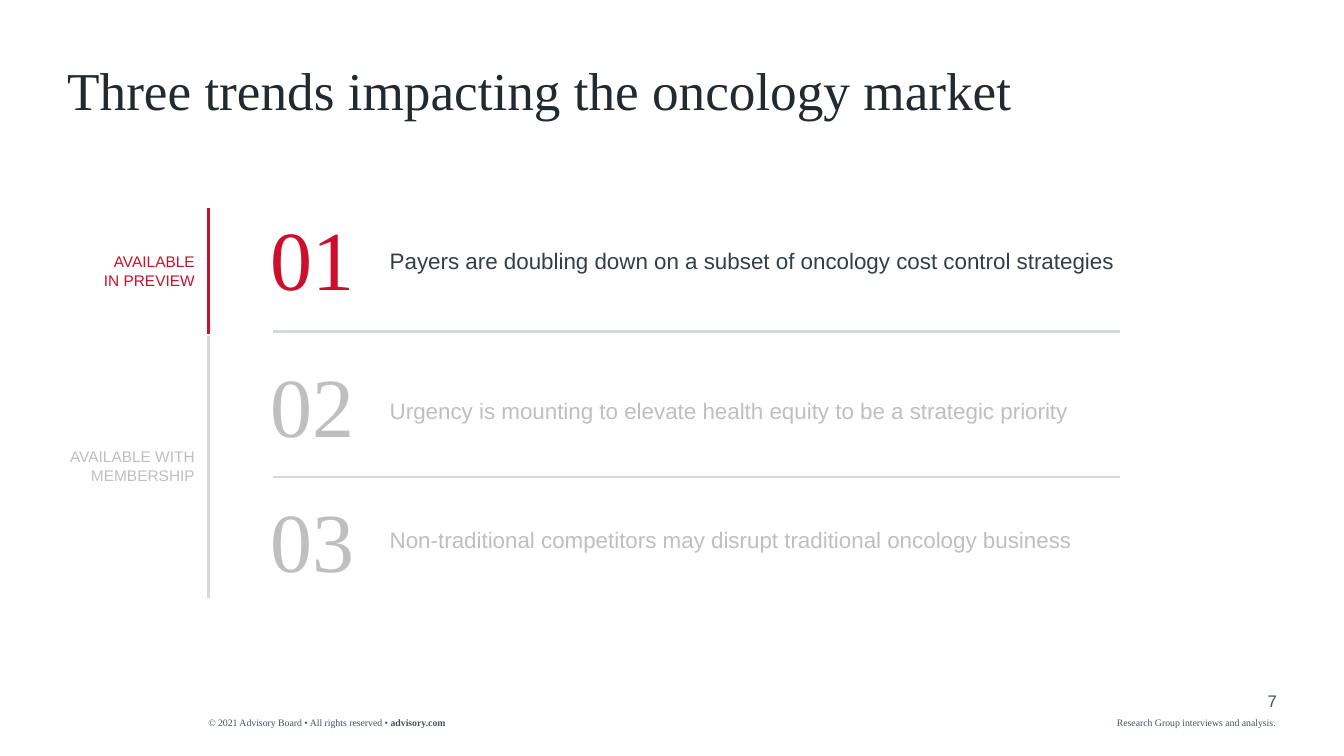
"""Build the slide on three trends impacting the oncology market."""
import pptx
import pptx.dml.color
import pptx.enum.shapes
import pptx.enum.text
import pptx.oxml
import pptx.oxml.ns
import pptx.util

WIDTH, HEIGHT = pptx.util.Inches(13.33), pptx.util.Inches(7.5)
COLUMNS = ROWS = 20
SERIF, SANS = "Times New Roman", "Arial"
COLORS = {
    "title": "222A30",
    "body": "323E48",
    "footer": "445460",
    "accent": "CE0E2D",
    "muted": "BFBFBF",
    "rule": "D6D9DA",
}
RULE_X = 3.1
LABEL_RIGHT = 2.9
TRENDS = [
    ("01", 5.47, 6.53, "accent", "body",
     "Payers are doubling down on a subset of oncology cost control strategies"),
    ("02", 9.36, 10.51, "muted", "muted",
     "Urgency is mounting to elevate health equity to be a strategic priority"),
    ("03", 12.93, 13.92, "muted", "muted",
     "Non-traditional competitors may disrupt traditional oncology business"),
]
DIVIDERS = [8.77, 12.61]
SECTIONS = [
    ("AVAILABLE IN PREVIEW", 1.41, 6.67, "accent", "accent", 5.49, 8.83),
    ("AVAILABLE WITH MEMBERSHIP", 1.91, 11.84, "muted", "rule", 8.88, 15.81),
]


def col(n):
    """Return the horizontal length of n grid columns."""
    return round(n * WIDTH / COLUMNS)


def row(n):
    """Return the vertical length of n grid rows."""
    return round(n * HEIGHT / ROWS)


def rgb(name):
    """Return the named colour."""
    return pptx.dml.color.RGBColor.from_string(COLORS[name])


def add_text(s, text, x, y, w, h, size, font=SANS, color="body",
             right=False, wrap=True, spacing=None, bold_tail=""):
    """Add a text box without insets, with an optional bold ending."""
    tf = s.shapes.add_textbox(col(x), row(y), col(w), row(h)).text_frame
    tf.margin_left = tf.margin_right = tf.margin_top = tf.margin_bottom = 0
    tf.word_wrap = wrap
    p = tf.paragraphs[0]
    align = pptx.enum.text.PP_ALIGN
    p.alignment = align.RIGHT if right else align.LEFT
    if spacing:
        p.line_spacing = spacing
    for part, bold in ((text, False), (bold_tail, True)):
        if part:
            r = p.add_run()
            r.text = part
            r.font.name, r.font.size = font, pptx.util.Pt(size)
            r.font.bold = bold
            r.font.color.rgb = rgb(color)


def add_rule(s, x1, y1, x2, y2, color, weight):
    """Add a straight line between two grid points."""
    line = s.shapes.add_connector(
        pptx.enum.shapes.MSO_CONNECTOR.STRAIGHT,
        col(x1), row(y1), col(x2), row(y2))
    line.line.color.rgb = rgb(color)
    line.line.width = pptx.util.Pt(weight)
    line._element.spPr.append(pptx.oxml.parse_xml(
        f"<a:effectLst {pptx.oxml.ns.nsdecls('a')}/>"))


def add_trend(s, number, number_y, text_y, number_color, text_color, text):
    """Add a large number and its trend statement."""
    add_text(s, text, 5.8, text_y, 11.8, 0.72, 16, color=text_color)
    add_text(s, number, 3.88, number_y, 1.4, 2.69, 60, SERIF,
             number_color, right=True)


def add_section(s, label, width, y, label_color, rule_color, top, bottom):
    """Add a side label and the vertical rule of its section."""
    add_rule(s, RULE_X, top, RULE_X, bottom, rule_color, 2.25)
    add_text(s, label, LABEL_RIGHT - width, y, width, 0.99, 11,
             color=label_color, right=True)


def add_footer(s):
    """Add the copyright line, the source line and the page number."""
    add_text(s, "© 2021 Advisory Board • All rights reserved • ",
             RULE_X, 18.96, 4.89, 0.32, 7, SERIF, "footer",
             bold_tail="advisory.com")
    add_text(s, "Research Group interviews and analysis.",
             16.62, 18.96, 2.38, 0.32, 7, SERIF, "footer", wrap=False)
    add_text(s, "7", 18.25, 18.27, 0.75, 0.53, 12, color="footer", right=True)


def main():
    """Build and save the slide."""
    prs = pptx.Presentation()
    prs.slide_width, prs.slide_height = WIDTH, HEIGHT
    s = prs.slides.add_slide(prs.slide_layouts[6])
    add_footer(s)
    add_text(s, "Three trends impacting the oncology market",
             1, 1.71, 18, 1.57, 38, SERIF, "title", spacing=0.9)
    for trend in TRENDS:
        add_trend(s, *trend)
    for y in DIVIDERS:
        add_rule(s, 4.07, y, 16.67, y, "rule", 1.5)
    for section in SECTIONS:
        add_section(s, *section)
    prs.save("out.pptx")


if __name__ == "__main__":
    main()
